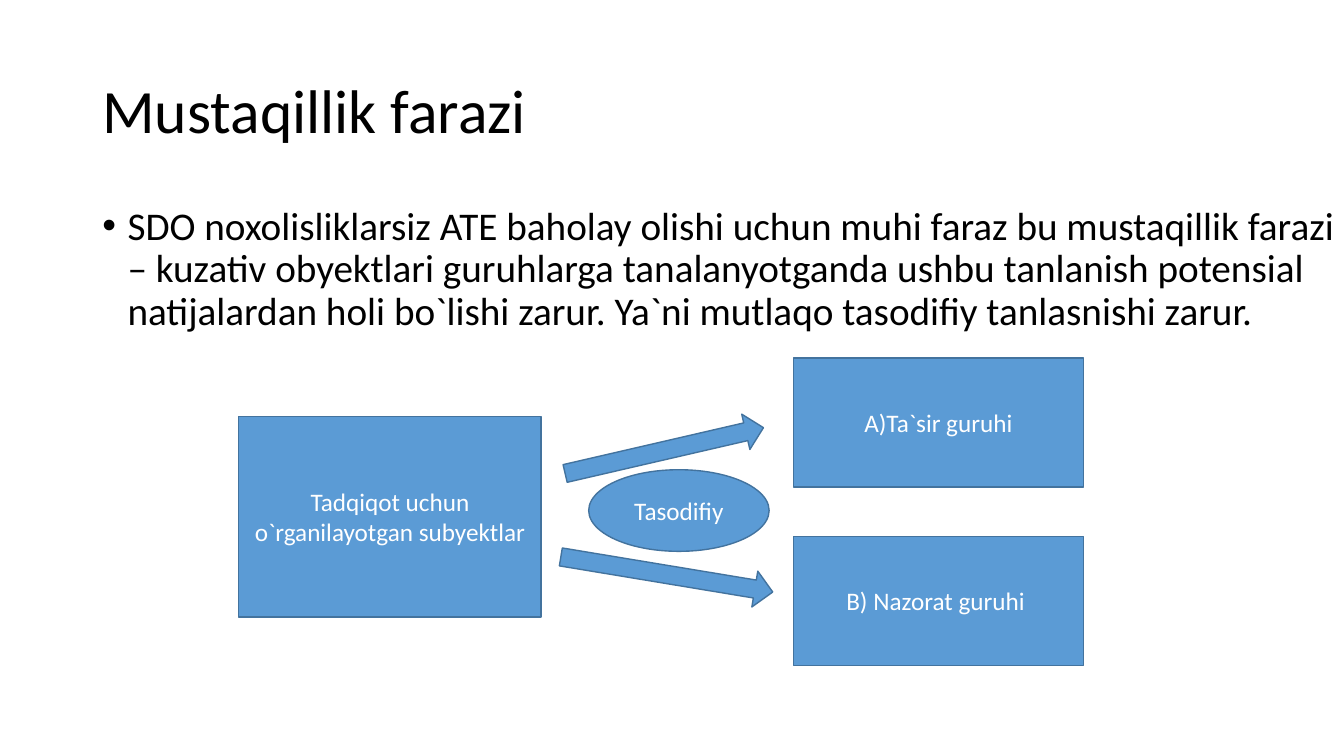
import pptx
import pptx.util
import pptx.dml.color
import pptx.enum.shapes
import pptx.enum.text
import pptx.oxml.ns
from lxml import etree

Pt = pptx.util.Pt
SHAPE = pptx.enum.shapes.MSO_SHAPE
ANCHOR = pptx.enum.text.MSO_ANCHOR
ALIGN = pptx.enum.text.PP_ALIGN

BLACK, WHITE = "000000", "FFFFFF"
BLUE, DARK_BLUE = "5B9BD5", "43739E"


def colour(hex_value):
    return pptx.dml.color.RGBColor.from_string(hex_value)


def apply_format(target, values):
    for name, value in values.items():
        setattr(target, name, value)


def write_text(frame, wording, size, hex_value, frame_format, paragraph_format):
    apply_format(frame, {"word_wrap": True, **frame_format})
    paragraph = frame.paragraphs[0]
    apply_format(paragraph, paragraph_format)
    run = paragraph.add_run()
    run.text = wording
    apply_format(run.font, {"name": "Calibri", "size": Pt(size)})
    run.font.color.rgb = colour(hex_value)
    return paragraph


def add_text(slide, box, wording, size, anchor, paragraph_format):
    frame = slide.shapes.add_textbox(*map(Pt, box)).text_frame
    return write_text(frame, wording, size, BLACK, {"vertical_anchor": anchor},
                      {"line_spacing": 0.9, **paragraph_format})


def add_bullet(paragraph, indent):
    properties = paragraph._p.get_or_add_pPr()
    apply_to = {"marL": indent, "indent": -indent}
    for name, length in apply_to.items():
        properties.set(name, str(int(Pt(length))))
    qn = pptx.oxml.ns.qn
    etree.SubElement(properties, qn("a:buFont"), typeface="Arial")
    etree.SubElement(properties, qn("a:buChar"), char="•")


def add_blue_shape(slide, kind, box, wording="", rotation=0):
    shape = slide.shapes.add_shape(kind, *map(Pt, box))
    shape.shadow.inherit = False
    shape.rotation = rotation
    shape.fill.solid()
    shape.fill.fore_color.rgb = colour(BLUE)
    shape.line.color.rgb = colour(DARK_BLUE)
    shape.line.width = Pt(1)
    if wording:
        write_text(shape.text_frame, wording, 18, WHITE,
                   {"vertical_anchor": ANCHOR.MIDDLE}, {"alignment": ALIGN.CENTER})


def main():
    deck = pptx.Presentation()
    apply_format(deck, {"slide_width": Pt(960), "slide_height": Pt(540)})
    slide = deck.slides.add_slide(deck.slide_layouts[6])

    # Title and statement of the assumption
    add_text(slide, (66, 28.8, 828, 104.4), "Mustaqillik farazi", 44, ANCHOR.MIDDLE, {})
    assumption = add_text(
        slide, (66, 144, 906.5, 127.4),
        "SDO noxolisliklarsiz ATE baholay olishi uchun muhi faraz bu mustaqillik "
        "farazi – kuzativ obyektlari guruhlarga tanalanyotganda ushbu tanlanish "
        "potensial natijalardan holi bo`lishi zarur. Ya`ni mutlaqo tasodifiy "
        "tanlasnishi zarur.",
        28, ANCHOR.TOP, {"space_before": Pt(10)})
    add_bullet(assumption, 18)

    # Subjects under study
    add_blue_shape(slide, SHAPE.RECTANGLE, (170.6, 297.4, 216, 143.3),
                   "Tadqiqot uchun o`rganilayotgan subyektlar")

    # Arrows towards the two groups
    for box, rotation in (((401.8, 308.9, 145.4, 25.9), 347),
                          ((399.6, 397.4, 153.4, 25.9), 9.4)):
        add_blue_shape(slide, SHAPE.RIGHT_ARROW, box, rotation=rotation)

    # Treatment and control groups
    for row, group in enumerate(("A)Ta`sir guruhi", "B) Nazorat guruhi ")):
        add_blue_shape(slide, SHAPE.RECTANGLE,
                       (566.6, 255.6 + row * 127.5, 207.4, 92.2), group)

    # Random assignment
    add_blue_shape(slide, SHAPE.OVAL, (420.5, 335.5, 128.9, 58.3), "Tasodifiy")

    deck.save("out.pptx")


if __name__ == "__main__":
    main()
